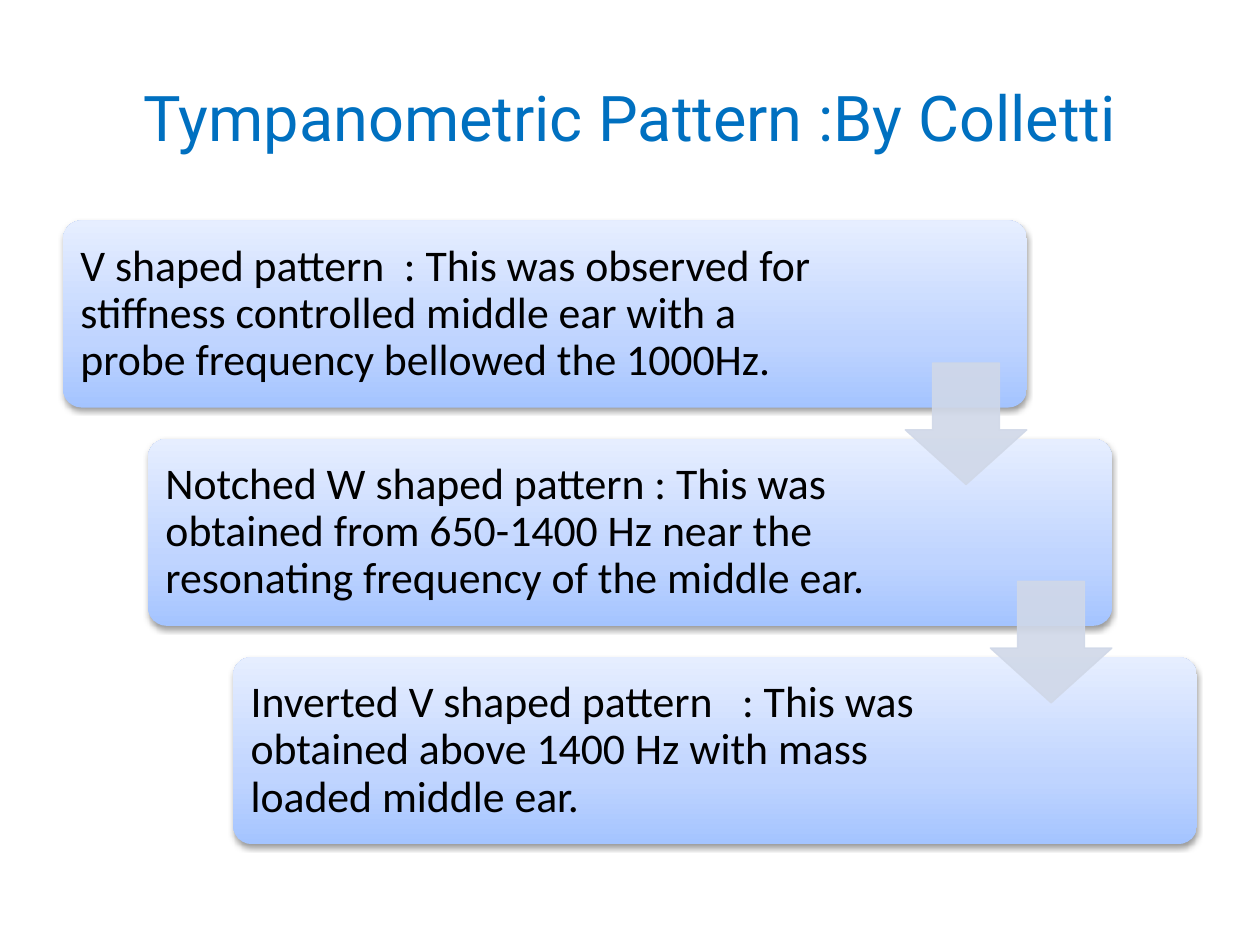
from lxml import etree
from pptx import Presentation
from pptx.dml.color import RGBColor
from pptx.enum.shapes import MSO_SHAPE
from pptx.enum.text import MSO_ANCHOR, PP_ALIGN
from pptx.oxml import parse_xml
from pptx.oxml.ns import nsdecls, qn
from pptx.util import Inches, Pt

CARD, ARROW = MSO_SHAPE.ROUNDED_RECTANGLE, MSO_SHAPE.DOWN_ARROW
MIDDLE, LEFT, CENTER = MSO_ANCHOR.MIDDLE, PP_ALIGN.LEFT, PP_ALIGN.CENTER
BLUE = RGBColor(0x00, 0x70, 0xC0)
BLACK = RGBColor(0x00, 0x00, 0x00)
GREY = RGBColor(0xD0, 0xD8, 0xE8)
STOPS = (
    (0, RGBColor(0xA4, 0xC4, 0xFF)),
    (35, RGBColor(0xBF, 0xD4, 0xFF)),
    (100, RGBColor(0xE6, 0xEE, 0xFF)),
)
STEPS = (
    ("V shaped pattern  : This was observed for stiffness controlled middle ear "
     "with a probe frequency bellowed the 1000Hz.", 6.05),
    ("Notched W shaped pattern : This was obtained from 650-1400 Hz near the "
     "resonating frequency of the middle ear.", 5.92),
    ("Inverted V shaped pattern   : This was obtained above 1400 Hz with mass "
     "loaded middle ear.", 5.92),
)


def add_text(slide, box, text, font, size, color, align=LEFT):
    """Place one wrapped, vertically centred paragraph in the box."""
    frame = slide.shapes.add_textbox(*map(Inches, box)).text_frame
    frame.word_wrap = True
    frame.vertical_anchor = MIDDLE
    frame.margin_left = frame.margin_right = Inches(0.1)
    frame.margin_top = frame.margin_bottom = Inches(0.1)
    para = frame.paragraphs[0]
    para.text = text
    para.alignment = align
    para.font.name, para.font.size = font, Pt(size)
    para.font.color.rgb = color
    return para


def add_card(slide, box, text, width):
    """Draw a shaded, shadowed card with its text inset."""
    card = slide.shapes.add_shape(CARD, *map(Inches, box))
    card.adjustments[0] = 0.1
    card.line.fill.background()
    card.shadow.inherit = False
    stops = "".join(
        f'<a:gs pos="{pos * 1000}"><a:srgbClr val="{color}"/></a:gs>'
        for pos, color in STOPS)
    props = card._element.spPr
    props.find(qn("a:prstGeom")).addnext(parse_xml(
        f'<a:gradFill {nsdecls("a")} rotWithShape="1"><a:gsLst>{stops}</a:gsLst>'
        '<a:lin ang="16200000" scaled="0"/></a:gradFill>'))
    props.find(qn("a:effectLst")).append(parse_xml(
        f'<a:outerShdw {nsdecls("a")} blurRad="40000" dist="20000" '
        'dir="5400000" rotWithShape="0"><a:srgbClr val="000000">'
        '<a:alpha val="38000"/></a:srgbClr></a:outerShdw>'))
    left, top, _, height = box
    inset = 0.04
    area = (left + inset, top + inset, width, height - 2 * inset)
    para = add_text(slide, area, text, "Calibri", 25, BLACK)
    para.line_spacing = 0.9
    para.space_after = Pt(8.75)


def add_arrow(slide, box):
    """Draw a translucent down arrow."""
    arrow = slide.shapes.add_shape(ARROW, *map(Inches, box))
    arrow.adjustments[0], arrow.adjustments[1] = 0.55, 0.45
    arrow.shadow.inherit = False
    arrow.fill.solid()
    arrow.fill.fore_color.rgb = GREY
    arrow.line.color.rgb = GREY
    arrow.line.width = Pt(0.75)
    for color in arrow._element.spPr.iter(qn("a:srgbClr")):
        etree.SubElement(color, qn("a:alpha"), val="90000")


def add_stairs(slide, box):
    """Step the cards down the box and link them with arrows."""
    left, top, width, height = box
    wide, high, side = width * 0.85, height * 0.3, height * 0.195
    last = len(STEPS) - 1
    across, down = (width - wide) / last, (height - high) / last
    spots = [(left + i * across, top + i * down) for i in range(len(STEPS))]
    for (x, y), (text, span) in zip(spots, STEPS):
        add_card(slide, (x, y, wide, high), text, span)
    for x, y in spots[:last]:
        add_arrow(slide, (x + wide - side, y + height * 0.2285, side, side))


def main():
    """Build and save the slide."""
    deck = Presentation()
    deck.slide_width, deck.slide_height = Inches(10), Inches(7.5)
    slide = deck.slides.add_slide(deck.slide_layouts[6])
    add_text(slide, (0.5, 0.3, 9, 1.25), "Tympanometric Pattern :By Colletti",
             "Roboto", 36, BLUE, CENTER)
    add_stairs(slide, (0.5, 1.75, 9, 4.95))
    deck.save("out.pptx")


if __name__ == "__main__":
    main()
